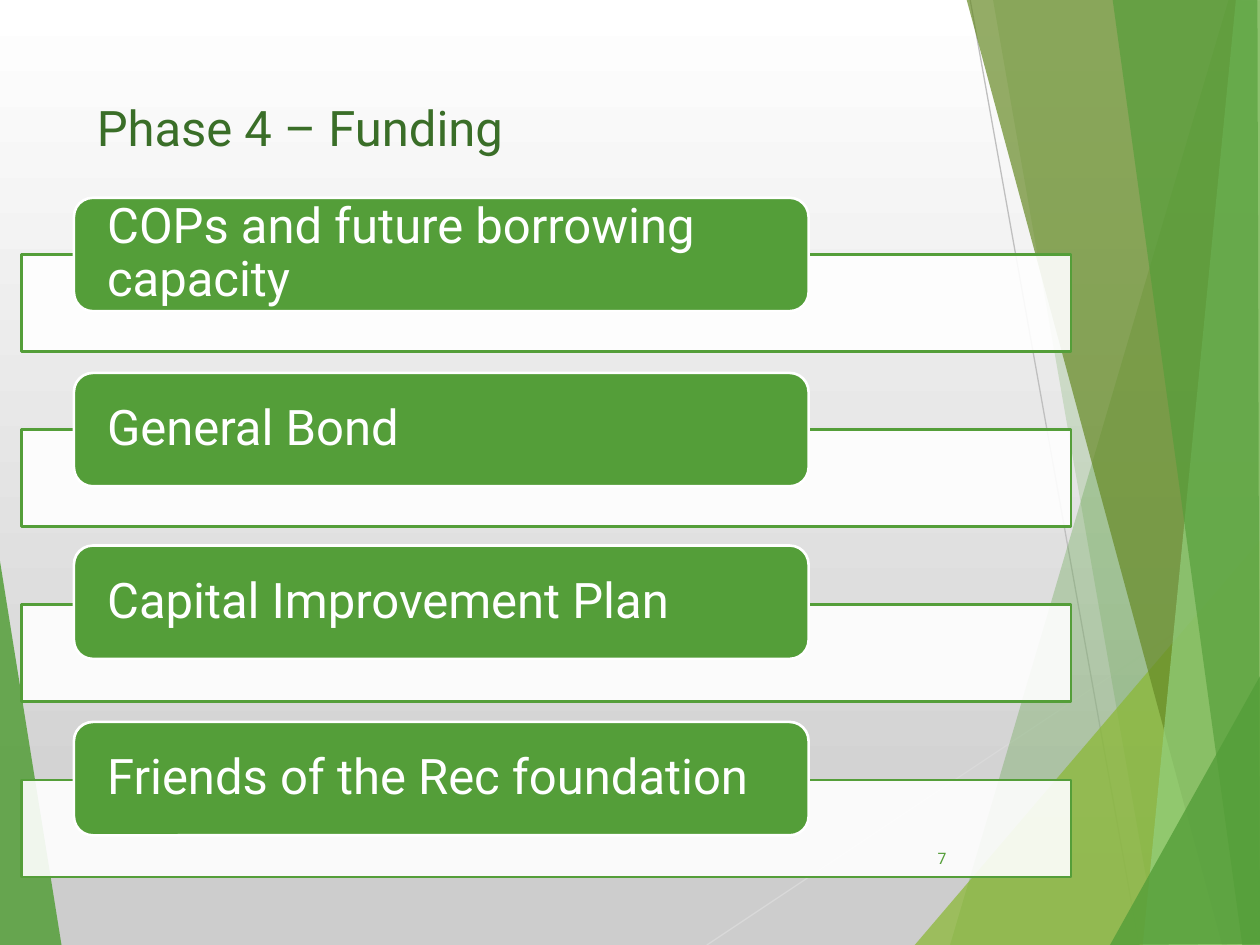
from lxml import etree
from pptx import Presentation
from pptx.dml.color import RGBColor
from pptx.enum.shapes import MSO_CONNECTOR, MSO_SHAPE
from pptx.enum.text import MSO_ANCHOR, PP_ALIGN
from pptx.oxml.ns import qn
from pptx.util import Inches, Pt

STRAIGHT = MSO_CONNECTOR.STRAIGHT
RECTANGLE, ROUNDED = MSO_SHAPE.RECTANGLE, MSO_SHAPE.ROUNDED_RECTANGLE
MIDDLE = MSO_ANCHOR.MIDDLE
LEFT, RIGHT = PP_ALIGN.LEFT, PP_ALIGN.RIGHT

FONT = "Roboto"
COLORS = {
    "green": "549E39", "dark": "3A6E28", "lime": "8AB833", "olive": "678A26",
    "mint": "93D07D", "white": "FFFFFF", "gray": "CDCDCD",
    "light line": "D9D9D9", "line": "BFBFBF",
}

# Each shard: corner points in inches, colour, opacity in percent
LEFT_SHARD = ([(-0.01, 4.39), (0.49, 7.51), (-0.01, 7.5)], "green", 85)
RIGHT_SHARDS = [
    ([(9.75, 0), (7.54, 7.5), (10.02, 7.51), (10.01, 0.01)], "green", 30),
    ([(7.88, -0.01), (9.19, 7.5), (10.01, 7.5), (10.01, -0.01)], "green", 20),
    ([(7.26, 7.5), (10, 4.29), (10.01, 7.5)], "lime", 72),
    ([(7.67, -0.01), (9.7, 7.5), (10.01, 7.49), (10.01, -0.01)], "olive", 70),
    ([(9.81, -0.01), (9.07, 7.5), (10.01, 7.5), (10, -0.01)], "mint", 70),
    ([(8.83, -0.01), (9.86, 7.5), (10, 7.5), (9.98, -0.01)], "green", 65),
    ([(8.81, 7.5), (10.01, 5.35), (10.01, 7.49)], "green", 80),
]
HAIRLINES = [
    ((5.61, 7.5), (10.01, 4.57), "light line"),
    ((7.7, 0), (9.04, 7.5), "line"),
]

# Funding sources with the offset of each label from the top of its row
SOURCES = [
    ("COPs and future borrowing capacity", 0),
    ("General Bond", 0),
    ("Capital Improvement Plan", -0.02),
    ("Friends of the Rec foundation", -0.01),
]


def color(name):
    return RGBColor.from_string(COLORS[name])


def style_shape(shape, fill, opacity=100, line=None):
    shape.shadow.inherit = False
    shape.fill.solid()
    shape.fill.fore_color.rgb = color(fill)
    if opacity < 100:
        tint = shape.fill._xPr.find(".//" + qn("a:srgbClr"))
        etree.SubElement(tint, qn("a:alpha")).set("val", str(opacity * 1000))
    if line:
        shape.line.color.rgb = color(line)
        shape.line.width = Pt(1.5)
    else:
        shape.line.fill.background()


def write_text(shape, text, *, size, tint, align=LEFT, margins=(0.1, 0.05), spacing=1.0):
    frame = shape.text_frame
    frame.word_wrap = True
    frame.vertical_anchor = MIDDLE
    frame.margin_left = frame.margin_right = Inches(margins[0])
    frame.margin_top = frame.margin_bottom = Inches(margins[1])
    para = frame.paragraphs[0]
    para.alignment = align
    para.line_spacing = spacing
    span = para.add_run()
    span.text = text
    span.font.name = FONT
    span.font.size = Pt(size)
    span.font.color.rgb = color(tint)


def add_text(slide, box, text, **text_format):
    write_text(slide.shapes.add_textbox(*map(Inches, box)), text, **text_format)


def add_shard(slide, points, fill, opacity):
    start, *rest = [(Inches(x), Inches(y)) for x, y in points]
    builder = slide.shapes.build_freeform(*start)
    builder.add_line_segments(rest, close=True)
    style_shape(builder.convert_to_shape(), fill, opacity)


def add_hairline(slide, start, end, tint):
    line = slide.shapes.add_connector(STRAIGHT, *map(Inches, start + end))
    line.line.color.rgb = color(tint)
    line.line.width = Pt(0.75)
    etree.SubElement(line._element.spPr, qn("a:effectLst"))


def add_backdrop(slide):
    # Vertical gradient from white to gray
    fill = slide.background.fill
    fill.gradient()
    fill.gradient_angle = 270
    for stop, name, position in zip(fill.gradient_stops, ("white", "gray"), (0, 0.94)):
        stop.color.rgb = color(name)
        stop.position = position
    # Facets along both edges
    add_shard(slide, *LEFT_SHARD)
    for hairline in HAIRLINES:
        add_hairline(slide, *hairline)
    for shard in RIGHT_SHARDS:
        add_shard(slide, *shard)


def add_source_list(slide, box, sources):
    left, top, width, height = box
    bar_drop, bar_height, label_height = 0.45, 0.77, 0.9
    pitch = (height - bar_drop - bar_height) / (len(sources) - 1)
    for index, (text, offset) in enumerate(sources):
        row_top = top + index * pitch
        # Outlined bar behind the label
        bar = slide.shapes.add_shape(
            RECTANGLE, *map(Inches, (left, row_top + bar_drop, width, bar_height)))
        style_shape(bar, "white", opacity=90, line="green")
        # Rounded label
        label = slide.shapes.add_shape(
            ROUNDED, *map(Inches, (left + width * 0.05, row_top + offset,
                                   width * 0.7, label_height)))
        style_shape(label, "green", line="white")
        write_text(label, text, size=28, tint="white", margins=(0.22, 0), spacing=0.9)


def main():
    deck = Presentation()
    deck.slide_width, deck.slide_height = Inches(10), Inches(7.5)
    slide = deck.slides.add_slide(deck.slide_layouts[6])

    add_backdrop(slide)
    add_text(slide, (0.67, 0.67, 7.33, 0.67), "Phase 4 – Funding", size=28, tint="dark")
    add_source_list(slide, (0.17, 1.57, 8.33, 5.39), SOURCES)
    # Page number
    add_text(slide, (7.05, 6.61, 0.56, 0.4), "7", size=9, tint="green", align=RIGHT)

    deck.save("out.pptx")


if __name__ == "__main__":
    main()
